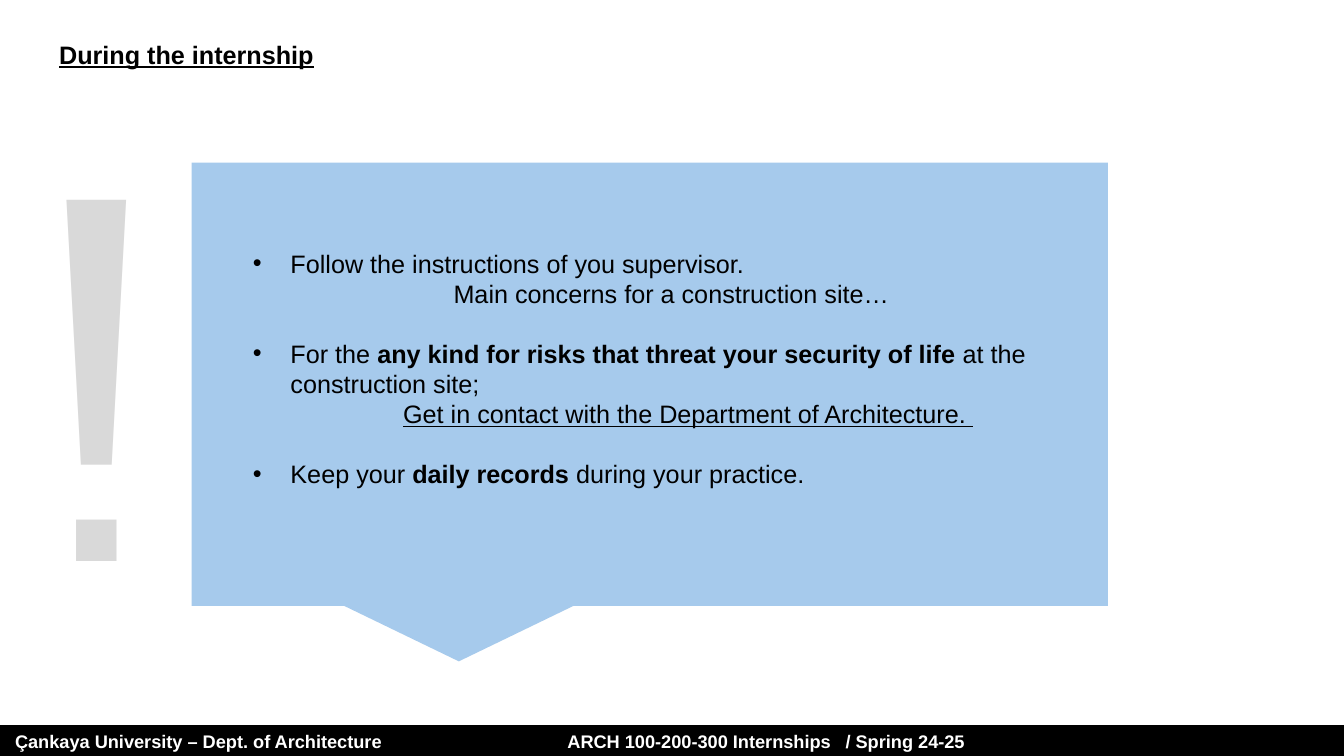
from lxml.etree import SubElement
from pptx import Presentation
from pptx.dml.color import RGBColor
from pptx.enum.shapes import MSO_SHAPE as Shape
from pptx.enum.text import MSO_ANCHOR as Anchor, MSO_AUTO_SIZE as Fit, PP_ALIGN as Align
from pptx.oxml.ns import qn
from pptx.util import Cm, Pt

BLACK, WHITE, GREY, BLUE = "000000", "FFFFFF", "D9D9D9", "A6CAEC"
LINE = 21.5  # list line pitch in points


def paint(fmt, color):
    """Set a solid colour on a fill."""
    fmt.solid()
    fmt.fore_color.rgb = RGBColor.from_string(color)


def place(box, left, top, width, height):
    box.left, box.top, box.width, box.height = map(Cm, (left, top, width, height))
    return box


def block(slide, kind, *area, color):
    box = slide.shapes.add_shape(kind, *map(Cm, area))
    box.shadow.inherit = False
    paint(box.fill, color)
    box.line.fill.background()


def setup(box, left=0.25, top=0.13):
    """Prepare a text frame with fixed insets, anchored at its top."""
    frame = box.text_frame
    frame.word_wrap = True
    frame.auto_size = Fit.NONE
    frame.vertical_anchor = Anchor.TOP
    frame.margin_left, frame.margin_top = Cm(left), Cm(top)
    return frame


def write(para, text, size=18, font="Arial", color=BLACK, bold=False, under=False):
    run = para.add_run()
    run.text = text
    face = run.font
    face.name, face.size = font, Pt(size)
    face.bold, face.underline = bold, under
    paint(face.fill, color)


def indent(para, left, hang=0, mark=None):
    """Set the indent, and a bullet if a mark is given."""
    props = para._p.get_or_add_pPr()
    props.set("marL", str(Cm(left)))
    props.set("indent", str(-Cm(hang)))
    if mark:
        SubElement(props, qn("a:buFont"), typeface="Arial")
        SubElement(props, qn("a:buChar"), char=mark)
    else:
        SubElement(props, qn("a:buNone"))


def add_tabs(para, *stops):
    tabs = SubElement(para._p.get_or_add_pPr(), qn("a:tabLst"))
    for stop in stops:
        SubElement(tabs, qn("a:tab"), pos=str(Cm(stop)), algn="l")


def fill_list(frame, items):
    """Write items of (left, hang, mark, gap lines after, runs)."""
    for i, (left, hang, mark, gap, runs) in enumerate(items):
        para = frame.add_paragraph() if i else frame.paragraphs[0]
        para.alignment = Align.LEFT
        para.line_spacing = Pt(LINE)
        para.space_before, para.space_after = Pt(0), Pt(LINE * gap)
        indent(para, left, hang, mark)
        for text, style in runs:
            write(para, text, **style)


def main():
    deck = Presentation()
    deck.slide_width, deck.slide_height = Cm(33.87), Cm(19.05)
    slide = deck.slides.add_slide(deck.slide_layouts[1])
    title, body = slide.placeholders

    block(slide, Shape.RECTANGLE, 0, 18.27, 33.87, 0.78, color=BLACK)
    foot = slide.shapes.add_textbox(Cm(0), Cm(18.27), Cm(33.87), Cm(0.78))
    para = setup(foot, left=0.38).paragraphs[0]
    add_tabs(para, 13.92, 20.93)
    write(para, "Çankaya University – Dept. of Architecture\tARCH 100-200-300 Internships\t/ Spring 24-25",
          size=13, color=WHITE, bold=True)

    para = setup(place(title, 1.24, 0.85, 16.97, 1.02)).paragraphs[0]
    para.alignment = Align.LEFT
    write(para, "During the internship", bold=True, under=True)

    block(slide, Shape.RECTANGULAR_CALLOUT, 4.83, 4.1, 23.09, 11.17, color=BLUE)
    slide.shapes._spTree.append(body._element)  # list in front of the callout
    bold, point = {"bold": True}, (2.24, 0.95, "•")
    fill_list(setup(place(body, 4.83, 6.25, 23.09, 6.5), top=0), [
        (*point, 0, [("Follow the instructions of you supervisor.", {})]),
        (6.35, 0, None, 1, [("Main concerns for a construction site…", {})]),
        (*point, 0, [("For the ", {}),
                     ("any kind for risks that threat your security of life ", bold),
                     ("at the construction site;", {})]),
        (5.08, 0, None, 1, [("Get in contact with the Department of Architecture. ",
                             {"under": True})]),
        (*point, 0, [("Keep your ", {}), ("daily records ", bold),
                     ("during your practice.", {})]),
    ])

    alert = slide.shapes.add_textbox(Cm(0.71), Cm(1.88), Cm(5.23), Cm(14.96))
    write(setup(alert).paragraphs[0], "!", size=344, font="Cabin", color=GREY)

    deck.save("out.pptx")


if __name__ == "__main__":
    main()
